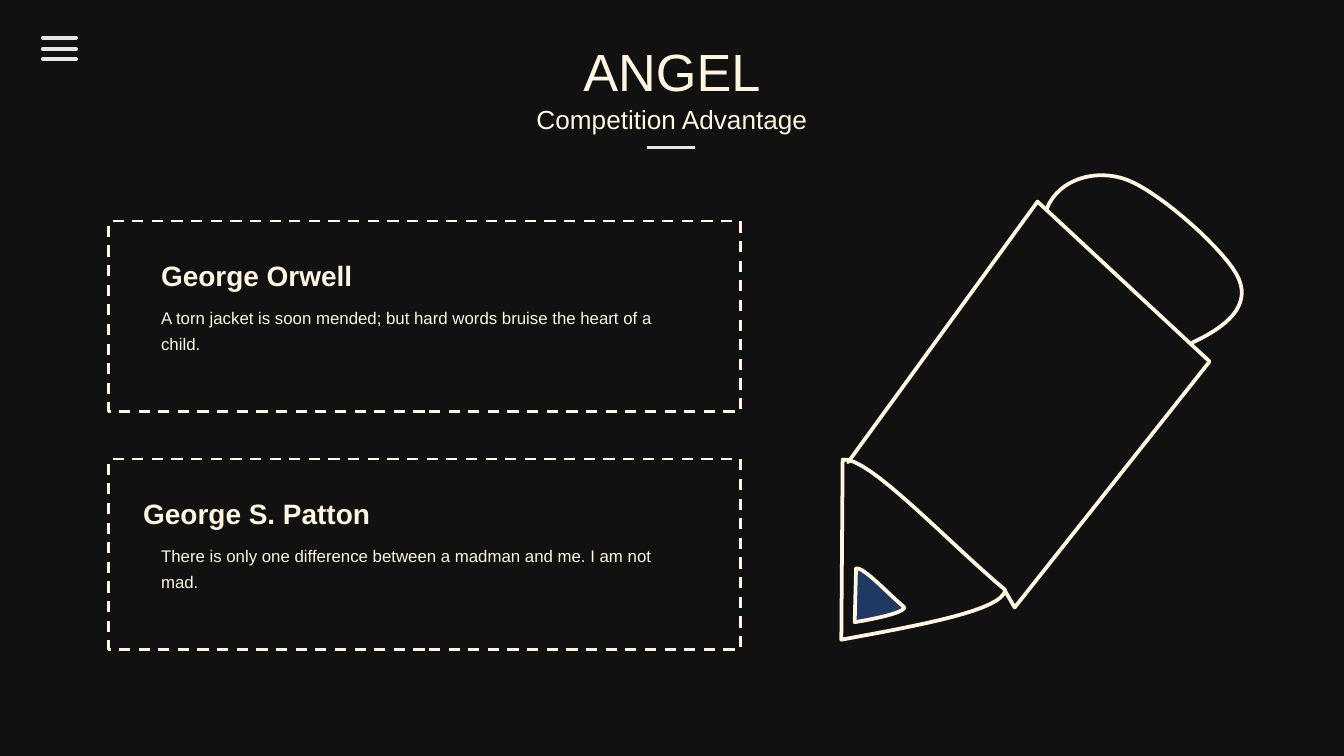
from lxml.etree import SubElement
from pptx import Presentation
from pptx.dml.color import RGBColor
from pptx.enum.dml import MSO_LINE
from pptx.enum.shapes import MSO_CONNECTOR, MSO_SHAPE
from pptx.enum.text import PP_ALIGN as Align
from pptx.oxml.ns import qn
from pptx.util import Inches, Pt

# The slide is a square grid, 100 columns wide and 56.25 rows high (16:9)
COLUMNS, ROWS = 100, 56.25
CELL = Inches(10) / COLUMNS
CREAM, GREY, NAVY, BLACK = "FFF5E1", "E7E6E6", "1F3864", "111111"

# Cards: top row, name, name's left column and width, quotation
CARDS = [
    (16.45, "George Orwell", 10.9, 16.4,
     "A torn jacket is soon mended; but hard words bruise the heart of a child."),
    (34.15, "George S. Patton", 9.55, 19.1,
     "There is only one difference between a madman and me. I am not mad."),
]

# Pencil outlines: a start, then steps of one point (line) or three (Bezier curve)
WOOD = [(62.6, 47.6),
        [(68.6, 46.5), (74.6, 45.4), (74.8, 43.9)],
        [(70.8, 40.6), (64.6, 33.9), (62.7, 34.2)]]
BARREL = [(63.1, 34.4), [(77.2, 15)], [(90, 26.9)], [(75.5, 45.2)], [(74.8, 44)]]
LEAD = [(63.6, 46.3),
        [(65.4, 46), (67.2, 45.6), (67.3, 45.2)],
        [(66.1, 44.2), (64.3, 42.2), (63.7, 42.3)]]
ERASER = [(88.7, 25.5),
          [(91.3, 24.3), (93, 22.8), (92.2, 20.8)],
          [(91.4, 18.8), (86.3, 14.3), (83.9, 13.4)],
          [(81.6, 12.5), (78.8, 13.3), (77.9, 15.5)]]


def grid(*lengths):
    return [round(length * CELL) for length in lengths]


def color(hex_text):
    return RGBColor.from_string(hex_text)


def style_line(shape, hex_text, width, rounded=False):
    shape.line.color.rgb = color(hex_text)
    shape.line.width = Pt(width)
    if rounded:
        line = shape.line._get_or_add_ln()
        line.set("cap", "rnd")
        SubElement(line, qn("a:round"))


def add_text(slide, text, box, size, align=Align.LEFT, bold=False,
             wrap=False, spacing=None):
    frame = slide.shapes.add_textbox(*grid(*box)).text_frame
    frame.word_wrap = wrap
    paragraph = frame.paragraphs[0]
    paragraph.alignment = align
    if spacing:
        paragraph.line_spacing = spacing
    run = paragraph.add_run()
    run.text = text
    run.font.name = "Arial"
    run.font.size = Pt(size)
    run.font.bold = bold
    run.font.color.rgb = color(CREAM)


def add_rule(slide, left, right, row, width, rounded=False):
    rule = slide.shapes.add_connector(
        MSO_CONNECTOR.STRAIGHT, *grid(left, row, right, row))
    style_line(rule, GREY, width, rounded)
    SubElement(rule._element.spPr, qn("a:effectLst"))


def add_card(slide, top, name, name_left, name_width, quotation):
    card = slide.shapes.add_shape(MSO_SHAPE.RECTANGLE, *grid(8.1, top, 47, 14.2))
    card.shadow.inherit = False
    card.fill.background()
    style_line(card, CREAM, 1.5)
    card.line.dash_style = MSO_LINE.DASH
    add_text(slide, quotation, (11, top + 5.5, 41.2, 4.8), 9,
             wrap=True, spacing=1.3)
    add_text(slide, name, (name_left, top + 2.3, name_width, 3.5), 15,
             align=Align.CENTER, bold=True)


def curve_points(start, controls, steps=16):
    """Points along a cubic Bezier curve, without its start."""
    for step in range(1, steps + 1):
        t = step / steps
        weights = ((1 - t) ** 3, 3 * t * (1 - t) ** 2, 3 * t ** 2 * (1 - t), t ** 3)
        yield tuple(sum(weight * point[axis]
                        for weight, point in zip(weights, (start, *controls)))
                    for axis in (0, 1))


def add_outline(slide, outline, closed=False, fill=None):
    points = [outline[0]]
    for step in outline[1:]:
        points += step if len(step) == 1 else curve_points(points[-1], step)
    start, *others = [grid(*point) for point in points]
    builder = slide.shapes.build_freeform(*start)
    builder.add_line_segments(others, close=closed)
    shape = builder.convert_to_shape()
    shape.shadow.inherit = False
    if fill:
        shape.fill.solid()
        shape.fill.fore_color.rgb = color(fill)
    else:
        shape.fill.background()
    style_line(shape, CREAM, 2, rounded=True)


def main():
    presentation = Presentation()
    presentation.slide_width, presentation.slide_height = grid(COLUMNS, ROWS)
    slide = presentation.slides.add_slide(presentation.slide_layouts[6])
    slide.background.fill.solid()
    slide.background.fill.fore_color.rgb = color(BLACK)

    # Heading
    add_text(slide, "ANGEL", (42.35, 2.4, 15.3, 5.7), 28, align=Align.CENTER)
    add_text(slide, "Competition Advantage", (35.85, 7.2, 28.3, 3.4), 14,
             align=Align.CENTER)
    add_rule(slide, 48.15, 51.7, 10.95, 1.5)

    # Menu icon
    for row in (2.8, 3.65, 4.4):
        add_rule(slide, 3.2, 5.65, row, 2.25, rounded=True)

    # Quotation cards
    for card in CARDS:
        add_card(slide, *card)

    # Pencil
    add_outline(slide, WOOD, closed=True)
    add_outline(slide, BARREL)
    add_outline(slide, LEAD, closed=True, fill=NAVY)
    add_outline(slide, ERASER)

    presentation.save("out.pptx")


if __name__ == "__main__":
    main()
